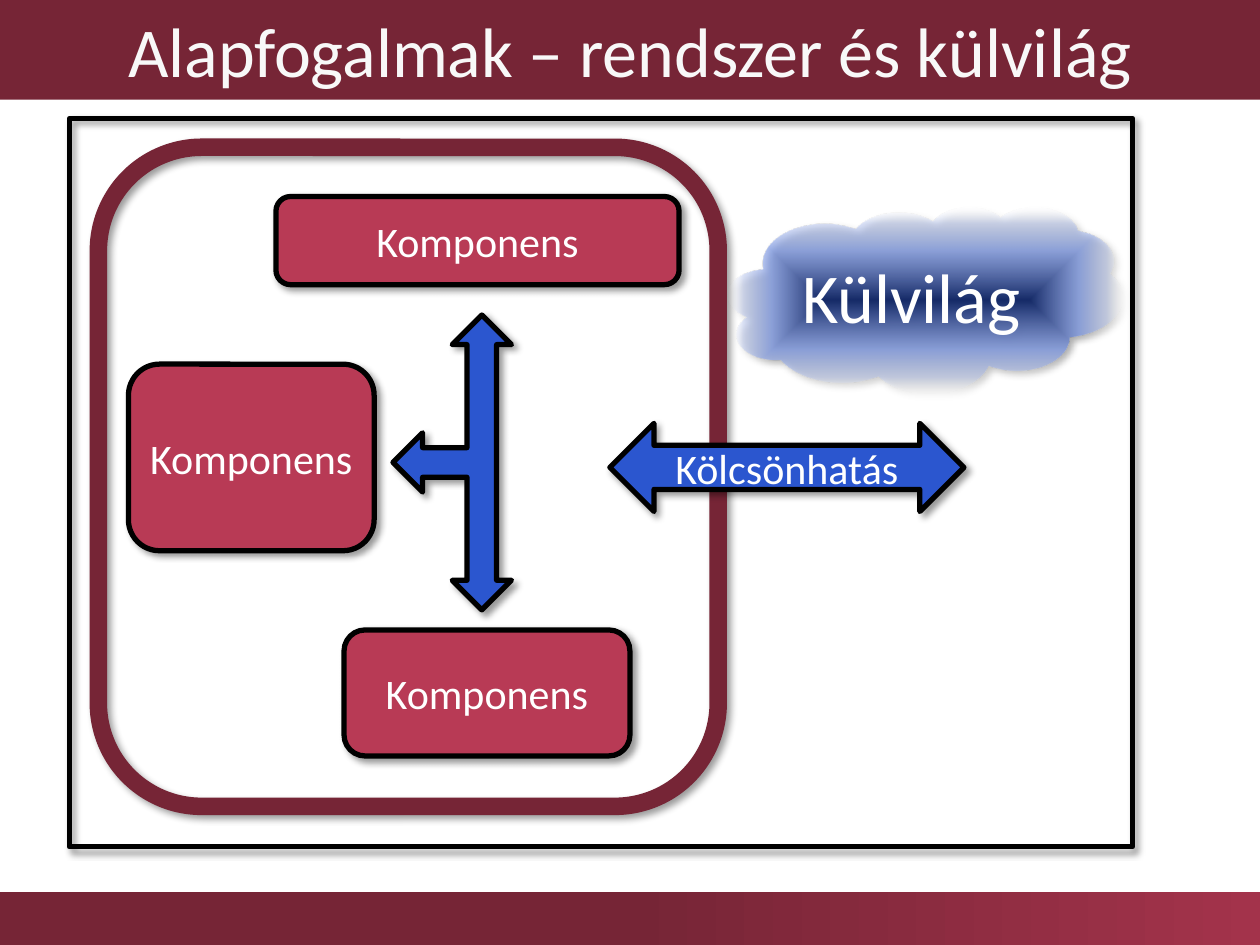
import pptx
import pptx.util
import pptx.dml.color
import pptx.enum.shapes
import pptx.enum.text
import pptx.oxml
import pptx.oxml.ns

Pt = pptx.util.Pt
RGB = pptx.dml.color.RGBColor.from_string
KIND = pptx.enum.shapes.MSO_SHAPE
qn = pptx.oxml.ns.qn
NS = pptx.oxml.ns.nsdecls("a")
COLORS = {
    "maroon": "762536", "crimson": "A3334B", "rose": "B83A55", "blue": "2B56CF",
    "navy": "162B68", "sky": "7E99E4", "haze": "A9BBED",
    "white": "FFFFFF", "title": "F8F8F8", "black": "000000",
}
SHADOW = (f'<a:outerShdw {NS} blurRad="{Pt(4)}" dist="{Pt(3)}" dir="2700000" algn="tl" rotWithShape="0">'
          f'<a:srgbClr val="{COLORS["black"]}"><a:alpha val="40000"/></a:srgbClr></a:outerShdw>')


def add_block(kind, box, fill=None, line=None, width=3, text="", size=24, shadow=True):
    block = slide.shapes.add_shape(kind, *[Pt(v) for v in box])
    block.shadow.inherit = False
    if shadow:
        block._element.spPr.find(qn("a:effectLst")).append(pptx.oxml.parse_xml(SHADOW))
    if fill:
        block.fill.solid()
        block.fill.fore_color.rgb = RGB(COLORS[fill])
    else:
        block.fill.background()
    if line:
        block.line.color.rgb = RGB(COLORS[line])
        block.line.width = Pt(width)
    else:
        block.line.fill.background()
    if text:
        write(block, text, size, "white")
    return block


def write(block, text, size, color):
    frame = block.text_frame
    frame.text = text
    frame.word_wrap = True
    frame.vertical_anchor = pptx.enum.text.MSO_ANCHOR.MIDDLE
    frame.paragraphs[0].alignment = pptx.enum.text.PP_ALIGN.CENTER
    font = frame.paragraphs[0].runs[0].font
    font.name = "Calibri"
    font.size = Pt(size)
    font.color.rgb = RGB(COLORS[color])


deck = pptx.Presentation()
deck.slide_width, deck.slide_height = Pt(720), Pt(540)
slide = deck.slides.add_slide(deck.slide_layouts[5])

footer = add_block(KIND.RECTANGLE, (0, 509.8, 720, 30.2), shadow=False)
add_block(KIND.ROUNDED_RECTANGLE, (56.2, 84.2, 354.2, 376.6), line="maroon", width=10)
add_block(KIND.RECTANGLE, (39.6, 67.7, 607.7, 416.2), line="black")

title = slide.shapes.title
title.left, title.top, title.width, title.height = Pt(0), Pt(0), Pt(720), Pt(56.9)
title.fill.solid()
title.fill.fore_color.rgb = RGB(COLORS["maroon"])
write(title, "Alapfogalmak – rendszer és külvilág", 40, "title")
slide.shapes._spTree.append(title._element)

add_block(KIND.LEFT_RIGHT_ARROW, (348.5, 241.9, 202.3, 50.4), "blue", "black", text="Kölcsönhatás")
outside = add_block(KIND.CLOUD, (416.2, 118.1, 225.4, 106.6), text="Külvilág", size=40)

for box in [(157.7, 112.3, 230.4, 50.4), (196.6, 360, 163.4, 72), (73.4, 208.1, 140.4, 106.6)]:
    add_block(KIND.ROUNDED_RECTANGLE, box, "rose", "black", text="Komponens")

links = add_block(KIND.LEFT_RIGHT_UP_ARROW, (174.2, 230.4, 168.5, 67.7), "blue", "black")
links.rotation = 270

gradients = [
    (footer, [(0, "maroon", 100), (50, "maroon", 100), (100, "crimson", 100)],
     '<a:lin ang="0" scaled="0"/>'),
    (outside, [(0, "navy", 100), (53, "sky", 75), (83, "haze", 40), (100, "white", 0)],
     '<a:path path="shape"><a:fillToRect l="50000" t="50000" r="50000" b="50000"/></a:path>'),
]
for block, stops, direction in gradients:
    marks = "".join(
        f'<a:gs pos="{pos * 1000}"><a:srgbClr val="{COLORS[color]}">'
        f'<a:alpha val="{alpha * 1000}"/></a:srgbClr></a:gs>'
        for pos, color, alpha in stops)
    gradient = pptx.oxml.parse_xml(
        f'<a:gradFill {NS} rotWithShape="1"><a:gsLst>{marks}</a:gsLst>{direction}</a:gradFill>')
    properties = block._element.spPr
    properties.replace(properties.find(qn("a:noFill")), gradient)

deck.save("out.pptx")
